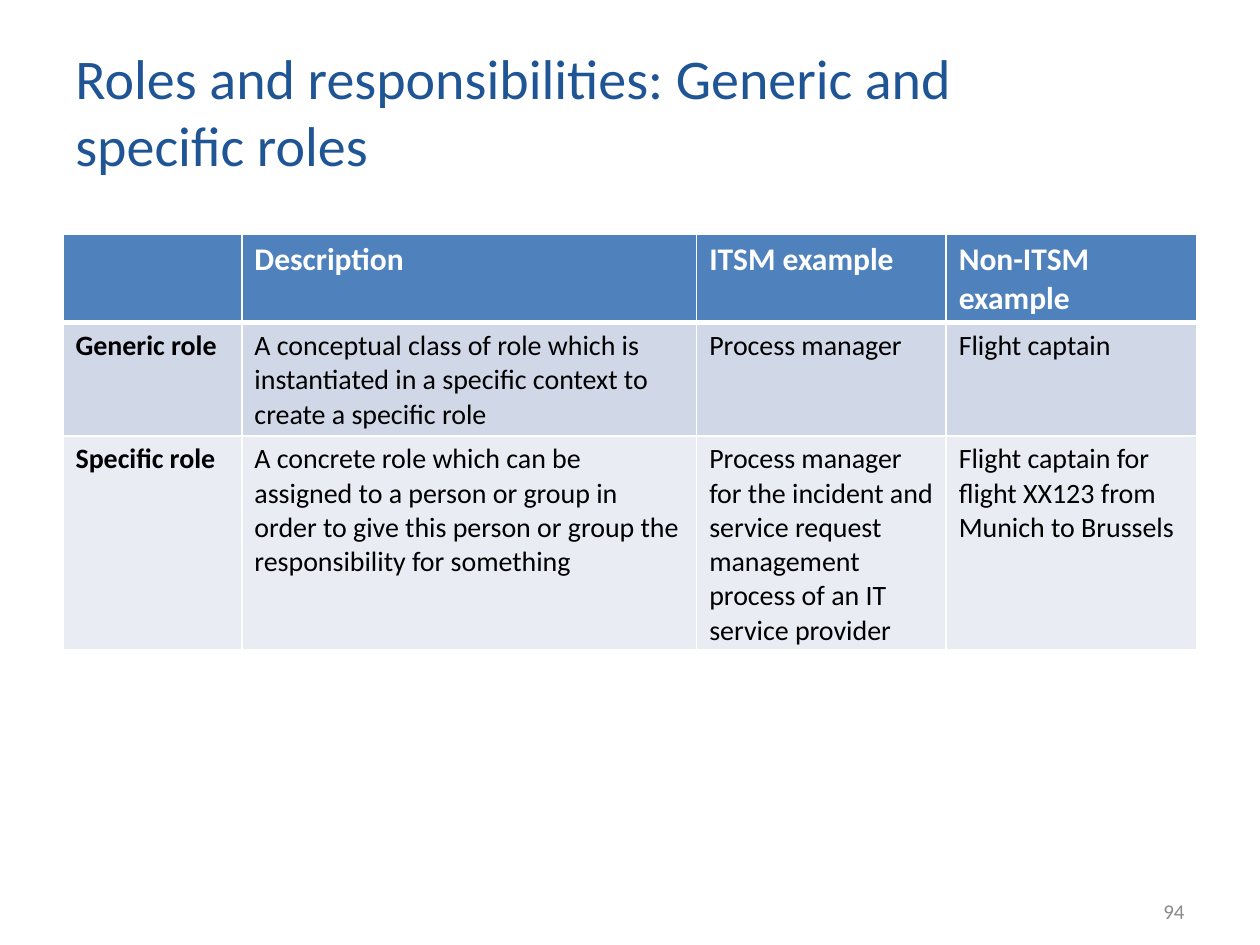
from typing import NamedTuple

from lxml.etree import SubElement
from pptx import Presentation
from pptx.dml.color import RGBColor
from pptx.enum.text import MSO_ANCHOR, PP_ALIGN
from pptx.oxml.ns import qn
from pptx.util import Inches, Pt

FONT = "Calibri"
TITLE_BLUE = RGBColor(0x20, 0x55, 0x95)
HEADER_BLUE = RGBColor(0x4F, 0x81, 0xBD)
BAND_DARK = RGBColor(0xD0, 0xD8, 0xE7)
BAND_LIGHT = RGBColor(0xE9, 0xEC, 0xF3)
NUMBER_GRAY = RGBColor(0x8B, 0x8B, 0x8B)
WHITE = RGBColor(0xFF, 0xFF, 0xFF)
BLACK = RGBColor(0, 0, 0)

THIN, THICK = Pt(0.96), Pt(3)
COLUMN_WIDTHS = (1.42, 3.61, 1.98, 1.99)


class RoleRow(NamedTuple):
    height: float
    fill: RGBColor
    color: RGBColor
    size: int
    top: int
    bottom: int
    texts: tuple[str, ...]


ROWS = (
    RoleRow(0.6, HEADER_BLUE, WHITE, 18, THIN, THICK,
            ("", "Description", "ITSM example", "Non-ITSM example")),
    RoleRow(0.76, BAND_DARK, BLACK, 16, THICK, THIN,
            ("Generic role",
             "A conceptual class of role which is instantiated in a specific "
             "context to create a specific role",
             "Process manager",
             "Flight captain")),
    RoleRow(1.42, BAND_LIGHT, BLACK, 16, THIN, THIN,
            ("Specific role",
             "A concrete role which can be assigned to a person or group in order "
             "to give this person or group the responsibility for something",
             "Process manager for the incident and service request management "
             "process of an IT service provider",
             "Flight captain for flight XX123 from Munich to Brussels")),
)


def write_text(frame, text: str, *, size: int, color: RGBColor,
               bold: bool = False, align=PP_ALIGN.LEFT) -> None:
    frame.word_wrap = True
    para = frame.paragraphs[0]
    para.alignment = align
    para.font.size = Pt(size)
    if not text:
        return
    span = para.add_run()
    span.text = text
    span.font.name = FONT
    span.font.size = Pt(size)
    span.font.bold = bold
    span.font.color.rgb = color


def add_text_box(slide, left: float, top: float, width: float, height: float,
                 text: str, **text_format) -> None:
    box = slide.shapes.add_textbox(Inches(left), Inches(top), Inches(width), Inches(height))
    box.text_frame.vertical_anchor = MSO_ANCHOR.MIDDLE
    write_text(box.text_frame, text, **text_format)


def set_borders(cell, top: int, bottom: int) -> None:
    """Draw white cell borders; the sides are always thin."""
    properties = cell._tc.get_or_add_tcPr()
    for side, width in (("L", THIN), ("R", THIN), ("T", top), ("B", bottom)):
        line = SubElement(properties, qn(f"a:ln{side}"), w=str(int(width)))
        fill = SubElement(line, qn("a:solidFill"))
        SubElement(fill, qn("a:srgbClr"), val=str(WHITE))


def add_role_table(slide, left: float, top: float) -> None:
    frame = slide.shapes.add_table(
        len(ROWS), len(COLUMN_WIDTHS), Inches(left), Inches(top),
        Inches(sum(COLUMN_WIDTHS)), Inches(sum(row.height for row in ROWS)))
    table = frame.table
    for column, width in zip(table.columns, COLUMN_WIDTHS):
        column.width = Inches(width)
    for row_index, row in enumerate(ROWS):
        table.rows[row_index].height = Inches(row.height)
        for column_index, text in enumerate(row.texts):
            cell = table.cell(row_index, column_index)
            set_borders(cell, row.top, row.bottom)
            cell.fill.solid()
            cell.fill.fore_color.rgb = row.fill
            write_text(cell.text_frame, text, size=row.size, color=row.color,
                       bold=row_index == 0 or column_index == 0)


def main() -> None:
    deck = Presentation()
    deck.slide_width, deck.slide_height = Inches(10), Inches(7.5)
    slide = deck.slides.add_slide(deck.slide_layouts[6])
    add_text_box(slide, 0.5, 0.3, 8.04, 1.15,
                 "Roles and responsibilities: Generic and specific roles",
                 size=32, color=TITLE_BLUE)
    add_role_table(slide, 0.5, 1.86)
    add_text_box(slide, 7.17, 7.03, 2.33, 0.4, "94",
                 size=12, color=NUMBER_GRAY, align=PP_ALIGN.RIGHT)
    deck.save("out.pptx")


if __name__ == "__main__":
    main()
